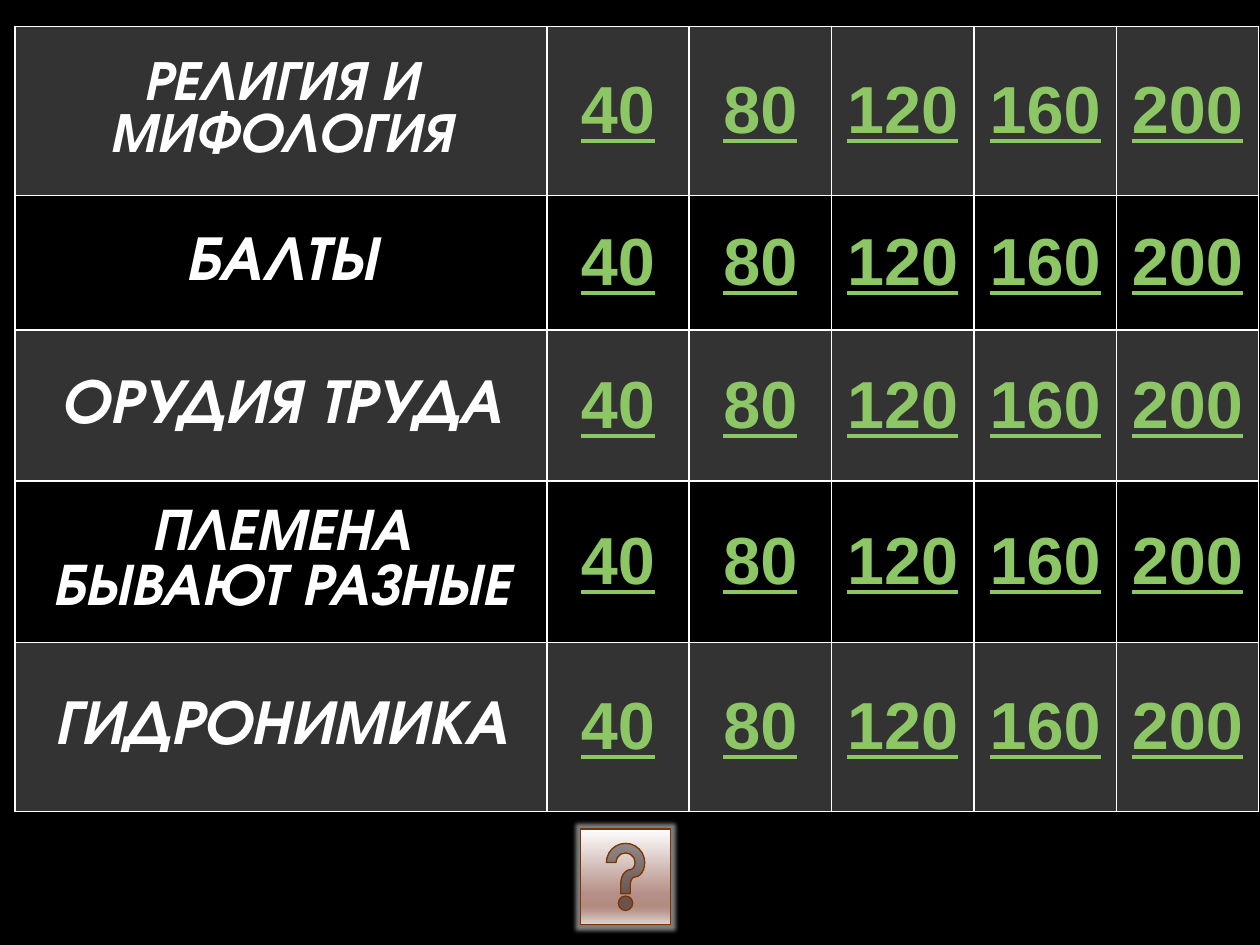
import pptx
import pptx.util
import pptx.dml.color
import pptx.enum.shapes
import pptx.enum.text
import pptx.oxml.ns
from lxml import etree

Inches = pptx.util.Inches
Pt = pptx.util.Pt
RGB = pptx.dml.color.RGBColor
qn = pptx.oxml.ns.qn

TOPICS = [
    ("РЕЛИГИЯ И МИФОЛОГИЯ", 32, 1.34),
    ("БАЛТЫ", 36, 1.07),
    ("ОРУДИЯ ТРУДА", 36, 1.2),
    ("ПЛЕМЕНА БЫВАЮТ РАЗНЫЕ", 34, 1.28),
    ("ГИДРОНИМИКА", 36, 1.34),
]
POINTS = ["40", "80", "120", "160", "200"]
WIDTHS = [4.22] + [1.13] * len(POINTS)

BLACK = RGB(0x00, 0x00, 0x00)
WHITE = RGB(0xFF, 0xFF, 0xFF)
GREEN = RGB(0x8D, 0xC7, 0x65)
BROWN = RGB(0x7C, 0x35, 0x00)
STOPS = [
    (0, RGB(0xFE, 0xFE, 0xFE)),
    (68, RGB(0xB5, 0x8F, 0x87)),
    (81, RGB(0xB3, 0x8B, 0x81)),
    (86, RGB(0xBA, 0x98, 0x90)),
    (100, RGB(0xE1, 0xD6, 0xD3)),
]


def add(node, tag, **attrs):
    return etree.SubElement(node, qn(tag), {k: str(v) for k, v in attrs.items()})


def tint(node, color, alpha=100):
    clr = add(node, "a:srgbClr", val=color)
    if alpha < 100:
        add(clr, "a:alpha", val=alpha * 1000)


def style(cell, banded):
    props = cell._tc.get_or_add_tcPr()
    for side in "LRTB":
        line = add(props, "a:ln" + side, w=Pt(1))
        tint(add(line, "a:solidFill"), WHITE)
    if banded:
        tint(add(props, "a:solidFill"), WHITE, 20)
    else:
        cell.fill.background()


def write(cell, text, face, size, color, topic):
    cell.text = text
    cell.vertical_anchor = pptx.enum.text.MSO_ANCHOR.MIDDLE
    para = cell.text_frame.paragraphs[0]
    para.alignment = pptx.enum.text.PP_ALIGN.CENTER
    font = para.font
    font.name, font.size, font.bold = face, Pt(size), True
    font.italic, font.underline = topic, not topic
    font.color.rgb = color


def board(slide):
    high = sum(row[2] for row in TOPICS)
    frame = slide.shapes.add_table(
        len(TOPICS), len(WIDTHS), Inches(0.12), Inches(0.21),
        Inches(sum(WIDTHS)), Inches(high))
    table = frame.table
    for col, width in zip(table.columns, WIDTHS):
        col.width = Inches(width)
    for r, (topic, size, height) in enumerate(TOPICS):
        table.rows[r].height = Inches(height)
        for c, text in enumerate([topic] + POINTS):
            cell = table.cell(r, c)
            style(cell, r % 2 == 0)
            if c == 0:
                write(cell, text, "TeX Gyre Adventor", size, WHITE, True)
            else:
                write(cell, text, "Arial", 38, GREEN, False)


def button(slide):
    shape = slide.shapes.add_shape(
        pptx.enum.shapes.MSO_SHAPE.ACTION_BUTTON_HELP,
        Inches(4.61), Inches(6.58), Inches(0.71), Inches(0.76))
    shape.shadow.inherit = False
    shape.line.color.rgb = BROWN
    shape.line.width = Pt(0.75)
    shape.fill.gradient()
    shape.fill.gradient_angle = 270
    props = shape._element.spPr
    stops = props.find(".//" + qn("a:gsLst"))
    for old in list(stops):
        stops.remove(old)
    for pos, color in STOPS:
        tint(add(stops, "a:gs", pos=pos * 1000), color)
    glow = add(props.find(qn("a:effectLst")), "a:glow", rad=Pt(5))
    tint(glow, WHITE, 50)


def main():
    deck = pptx.Presentation()
    deck.slide_width, deck.slide_height = Inches(10), Inches(7.5)
    slide = deck.slides.add_slide(deck.slide_layouts[6])
    slide.background.fill.solid()
    slide.background.fill.fore_color.rgb = BLACK
    board(slide)
    button(slide)
    deck.save("out.pptx")


if __name__ == "__main__":
    main()
